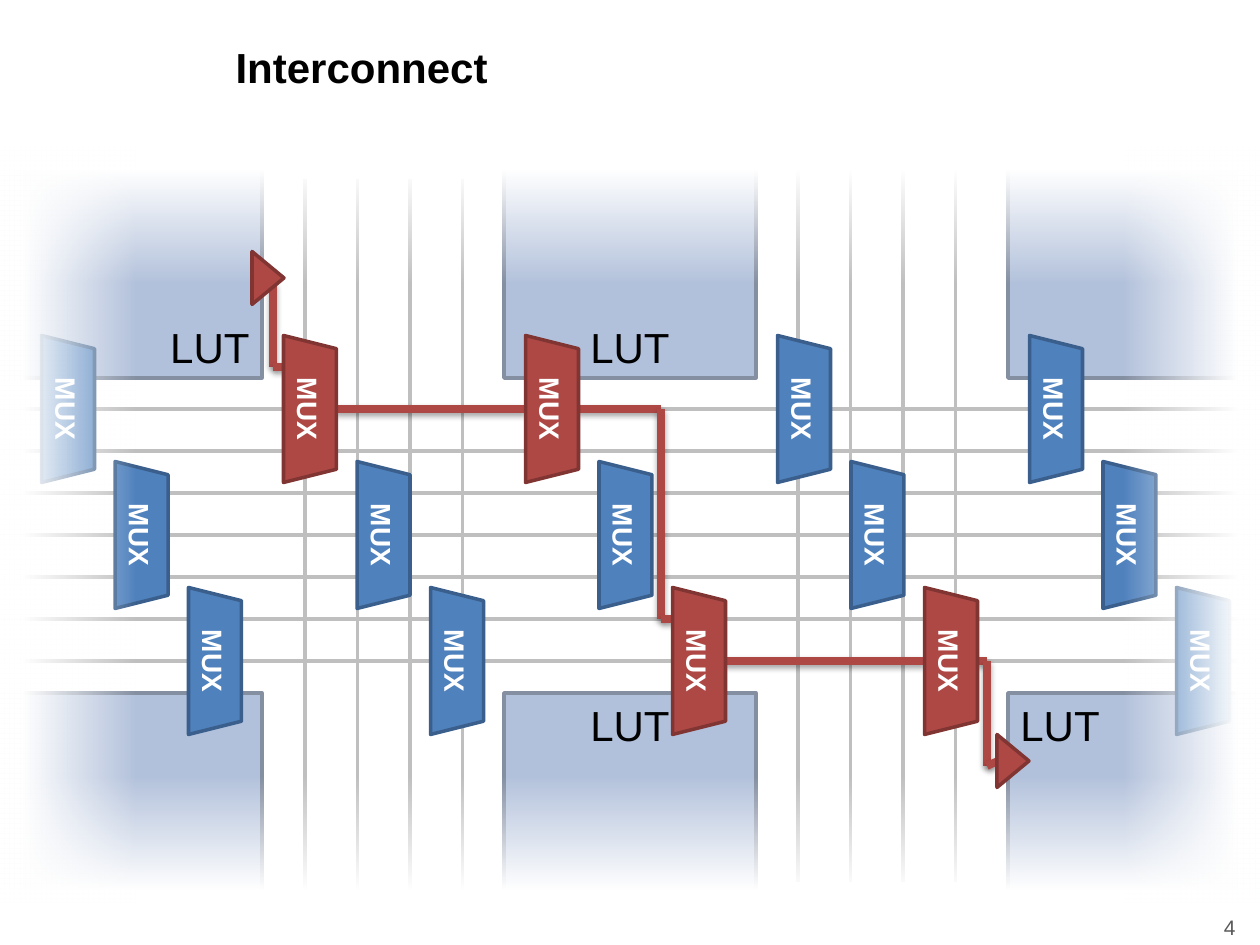
from lxml import etree
from pptx import Presentation
from pptx.dml.color import RGBColor
from pptx.enum.shapes import MSO_CONNECTOR, MSO_SHAPE
from pptx.enum.text import MSO_ANCHOR, PP_ALIGN
from pptx.oxml.ns import qn
from pptx.util import Pt

STRAIGHT = MSO_CONNECTOR.STRAIGHT
RECT, TRAPEZOID, TRIANGLE = MSO_SHAPE.RECTANGLE, MSO_SHAPE.TRAPEZOID, MSO_SHAPE.ISOSCELES_TRIANGLE
LEFT, CENTER, RIGHT = PP_ALIGN.LEFT, PP_ALIGN.CENTER, PP_ALIGN.RIGHT
TOP, MIDDLE, BOTTOM = MSO_ANCHOR.TOP, MSO_ANCHOR.MIDDLE, MSO_ANCHOR.BOTTOM

SCALE = 914400 / 126  # EMU in one px
WIDTH, HEIGHT = 1260, 945
FONT = "Arial"
WIRE, BLOCK, BLOCK_EDGE = "BFBFBF", "B2C1DB", "848FA2"
BLUE, RED = ("4F81BD", "3A5F8C"), ("AE4845", "813533")

# Wires: x of the first of four verticals, top, bottom; y of seven horizontals
vertical_buses = [(798, 168, 882), (305, 179, 892)]
wire_step, track_step, track_count = 105 / 2, 42, 7
first_track = 409

# Logic blocks: columns (left, width), rows (top, height), labels by (column, row)
block_columns = [(0, 262), (504, 252), (1008, 252)]
block_rows = [(157, 221), (693, 210)]
block_labels = {(0, 0): (RIGHT, BOTTOM), (1, 0): (CENTER, BOTTOM),
                (1, 1): (CENTER, TOP), (2, 1): (LEFT, TOP)}

# Multiplexers: centre of the top one in each diagonal of three
mux_starts = [68, 310, 552, 804, 1056]
mux_shift, mux_drop, mux_size = 73.5, 126, (147, 53)
routed_muxes = {(1, 0), (2, 0), (2, 2), (3, 2)}  # (diagonal, step)

# White fades: left, top, width, height, counter-clockwise gradient angle
fades = [(0, 777, 1260, 136, 90), (0, 147, 1260, 136, 270),
         (1124, 147, 136, 756, 180), (0, 147, 136, 756, 0)]

# The highlighted route
routes = [
    [(273, 283), (273, 367), (325, 367)],
    [(336, 409), (525, 409)],
    [(577, 409), (661, 409), (661, 619), (693, 619)],
    [(724, 661), (924, 661)],
    [(976, 661), (987, 661), (987, 766), (998, 761)],
]
triangle_centres, triangle_size = [(268, 278), (1013, 761)], (53, 32)


def px(value):
    return round(value * SCALE)


def color(hex_string):
    return RGBColor.from_string(hex_string)


def add_run(frame, text, size, ink, align, anchor, bold=False):
    frame.vertical_anchor = anchor
    paragraph = frame.paragraphs[0]
    paragraph.alignment = align
    run = paragraph.add_run()
    run.text = text
    font = run.font
    font.name, font.size, font.bold = FONT, Pt(size), bold
    font.color.rgb = color(ink)


def add_line(start, end, ink, weight, shadow=False):
    line = slide.shapes.add_connector(STRAIGHT, *map(px, (*start, *end)))
    line.line.color.rgb = color(ink)
    line.line.width = Pt(weight)
    effects = etree.SubElement(line._element.spPr, qn("a:effectLst"))
    if shadow:
        outer = etree.SubElement(effects, qn("a:outerShdw"), blurRad="40000",
                                 dist="23000", dir="5400000", rotWithShape="0")
        black = etree.SubElement(outer, qn("a:srgbClr"), val="000000")
        etree.SubElement(black, qn("a:alpha"), val="35000")


def add_solid(kind, left, top, width, height, fill, edge):
    shape = slide.shapes.add_shape(kind, *map(px, (left, top, width, height)))
    shape.shadow.inherit = False
    shape.fill.solid()
    shape.fill.fore_color.rgb = color(fill)
    shape.line.color.rgb = color(edge)
    shape.line.width = Pt(2)
    return shape


def add_turned(kind, centre, size, colors):
    (x, y), (width, height) = centre, size
    shape = add_solid(kind, x - width / 2, y - height / 2, width, height, *colors)
    shape.rotation = 90
    return shape


def add_mux(diagonal, step, colors):
    centre = (mux_starts[diagonal] + step * mux_shift, first_track + step * mux_drop)
    frame = add_turned(TRAPEZOID, centre, mux_size, colors).text_frame
    frame.margin_left = frame.margin_right = frame.margin_top = frame.margin_bottom = 0
    frame.word_wrap = False
    add_run(frame, "MUX", 16, "FFFFFF", CENTER, MIDDLE, bold=True)


def add_fade(left, top, width, height, angle):
    fade = slide.shapes.add_shape(RECT, *map(px, (left, top, width, height)))
    fade.shadow.inherit = False
    fade.line.fill.background()
    fade.fill.gradient()
    fade.fill.gradient_angle = angle
    for stop, position in zip(fade.fill.gradient_stops, (0.17, 1)):
        stop.color.rgb = color("FFFFFF")
        stop.position = position
    clear = fade._element.spPr.findall(".//" + qn("a:srgbClr"))[-1]
    etree.SubElement(clear, qn("a:alpha"), val="0")


prs = Presentation()
prs.slide_width, prs.slide_height = px(WIDTH), px(HEIGHT)
slide = prs.slides.add_slide(prs.slide_layouts[5])

# Title and slide number
title = slide.shapes.title
title.left, title.top, title.width, title.height = map(px, (223, 16, 920, 102))
add_run(title.text_frame, "Interconnect", 24, "000000", LEFT, MIDDLE, bold=True)
number = slide.shapes.add_textbox(*map(px, (954, 910, 294, 35)))
number.text_frame.word_wrap = True
add_run(number.text_frame, "4", 12, "595959", RIGHT, MIDDLE)

# Background wires
for first_x, top, bottom in vertical_buses:
    for i in range(4):
        x = first_x + i * wire_step
        add_line((x, top), (x, bottom), WIRE, 2)
for i in range(track_count):
    y = first_track + i * track_step
    add_line((0, y), (WIDTH, y), WIRE, 2)

# Logic blocks
for column, (left, width) in enumerate(block_columns):
    for row, (top, height) in enumerate(block_rows):
        block = add_solid(RECT, left, top, width, height, BLOCK, BLOCK_EDGE)
        if (column, row) in block_labels:
            add_run(block.text_frame, "LUT", 24, "000000", *block_labels[column, row])

# Idle multiplexers, then the fades over them
for diagonal in range(len(mux_starts)):
    for step in range(3):
        if (diagonal, step) not in routed_muxes:
            add_mux(diagonal, step, BLUE)
for fade_box in fades:
    add_fade(*fade_box)

# Route with its multiplexers and end triangles
for points in routes:
    for start, end in zip(points, points[1:]):
        add_line(start, end, RED[0], 4.5, shadow=True)
for diagonal, step in sorted(routed_muxes):
    add_mux(diagonal, step, RED)
for centre in triangle_centres:
    add_turned(TRIANGLE, centre, triangle_size, RED)

prs.save("out.pptx")
